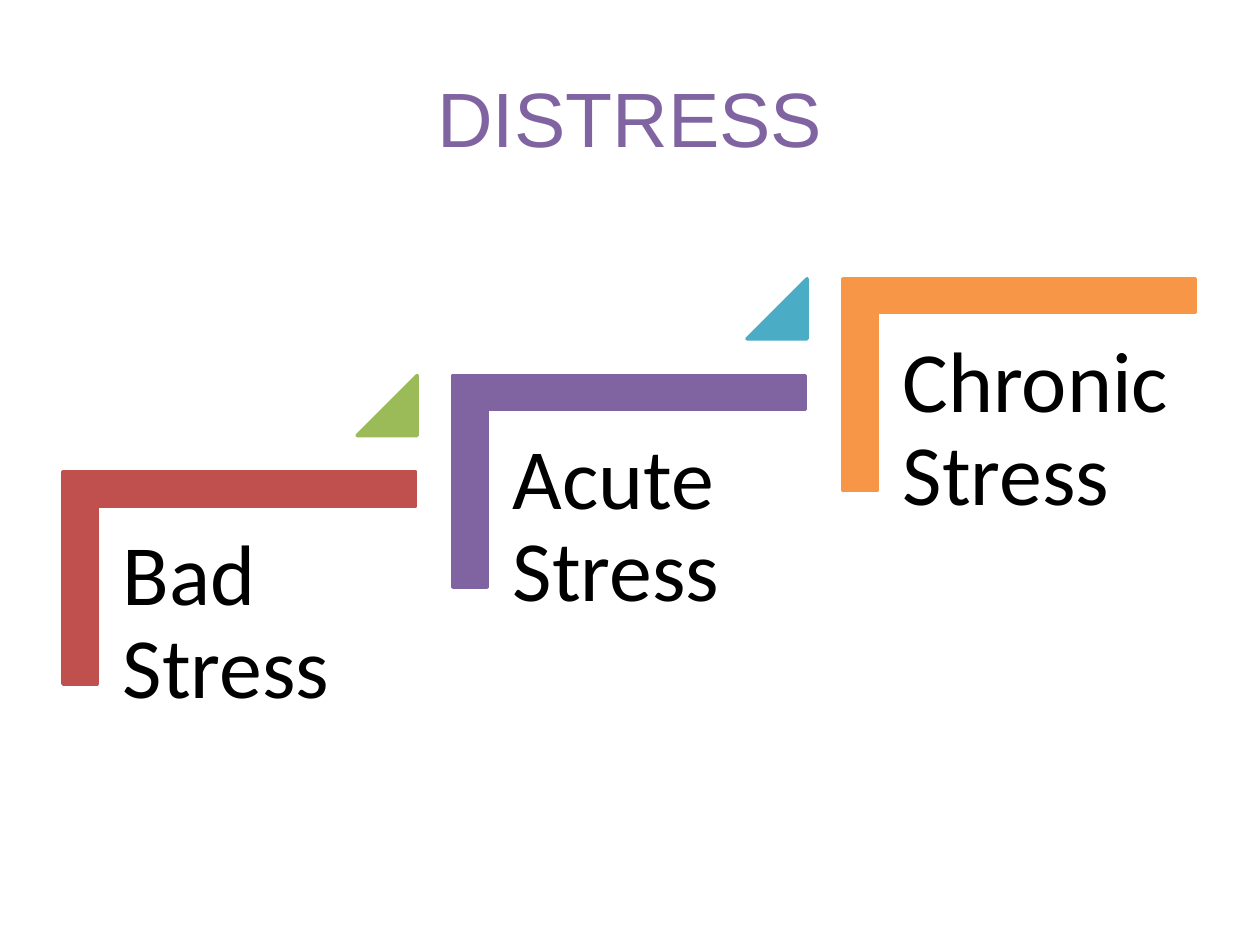
from pptx import Presentation
from pptx import util as u
from pptx.dml.color import RGBColor
from pptx.enum import shapes, text

COLORS = {
    "title": "8064A2",
    "label": "000000",
    "bad": "C0504D",
    "acute": "8064A2",
    "chronic": "F79646",
    "first_rise": "9BBB59",
    "second_rise": "4BACC6",
}
TITLE_FONT = {"name": "Arial", "size": u.Pt(44)}
LABEL_FONT = {"name": "Calibri", "size": u.Pt(49)}
TITLE_FRAME = {"vertical_anchor": text.MSO_ANCHOR.MIDDLE, "word_wrap": True}
LABEL_FRAME = {
    "word_wrap": True,
    "auto_size": text.MSO_AUTO_SIZE.NONE,
    "vertical_anchor": text.MSO_ANCHOR.TOP,
    "margin_left": u.Cm(0.5),
    "margin_right": u.Cm(0.5),
    "margin_top": u.Cm(0.5),
    "margin_bottom": u.Cm(0.5),
}
STAGES = [
    ("Bad Stress", "bad", "first_rise"),
    ("Acute Stress", "acute", "second_rise"),
    ("Chronic Stress", "chronic", None),
]
STEP_X, STEP_Y = 7.86, 1.95


def apply(target, values):
    for name, value in values.items():
        setattr(target, name, value)


def add_solid(kind, box, color, adjustments):
    solid = slide.shapes.add_shape(kind, *map(u.Cm, box))
    solid.shadow.inherit = False
    solid.fill.solid()
    solid.fill.fore_color.rgb = RGBColor.from_string(COLORS[color])
    solid.line.color.rgb = RGBColor.from_string(COLORS[color])
    solid.line.width = u.Pt(2)
    for index, value in enumerate(adjustments):
        solid.adjustments[index] = value
    return solid


deck = Presentation()
deck.slide_width, deck.slide_height = u.Cm(25.4), u.Cm(19.05)
slide = deck.slides.add_slide(deck.slide_layouts[5])

heading = slide.shapes.title
apply(heading, {"left": u.Cm(1.27), "top": u.Cm(0.76),
                "width": u.Cm(22.86), "height": u.Cm(3.18)})
heading.text_frame.text = "DISTRESS"
apply(heading.text_frame, TITLE_FRAME)
heading_line = heading.text_frame.paragraphs[0]
heading_line.alignment = text.PP_ALIGN.CENTER
apply(heading_line.runs[0].font, TITLE_FONT)
heading_line.runs[0].font.color.rgb = RGBColor.from_string(COLORS["title"])

for step, (stage, color, rise) in enumerate(STAGES):
    x, y = step * STEP_X, -step * STEP_Y
    bracket = add_solid(shapes.MSO_SHAPE.CORNER, (2.69 + x, 8.1 + y, 4.27, 7.11),
                        color, (0.16, 0.16))
    bracket.rotation = 90

    label = slide.shapes.add_textbox(*map(u.Cm, (1.98 + x, 10.22 + y, 6.43, 5.64)))
    apply(label.text_frame, LABEL_FRAME)
    label_line = label.text_frame.paragraphs[0]
    apply(label_line, {"line_spacing": 0.9, "alignment": text.PP_ALIGN.LEFT})
    wording = label_line.add_run()
    wording.text = stage
    apply(wording.font, LABEL_FONT)
    wording.font.color.rgb = RGBColor.from_string(COLORS["label"])

    if rise:
        add_solid(shapes.MSO_SHAPE.ISOSCELES_TRIANGLE,
                  (7.2 + x, 7.57 + y, 1.21, 1.21), rise, (1,))

deck.save("out.pptx")
